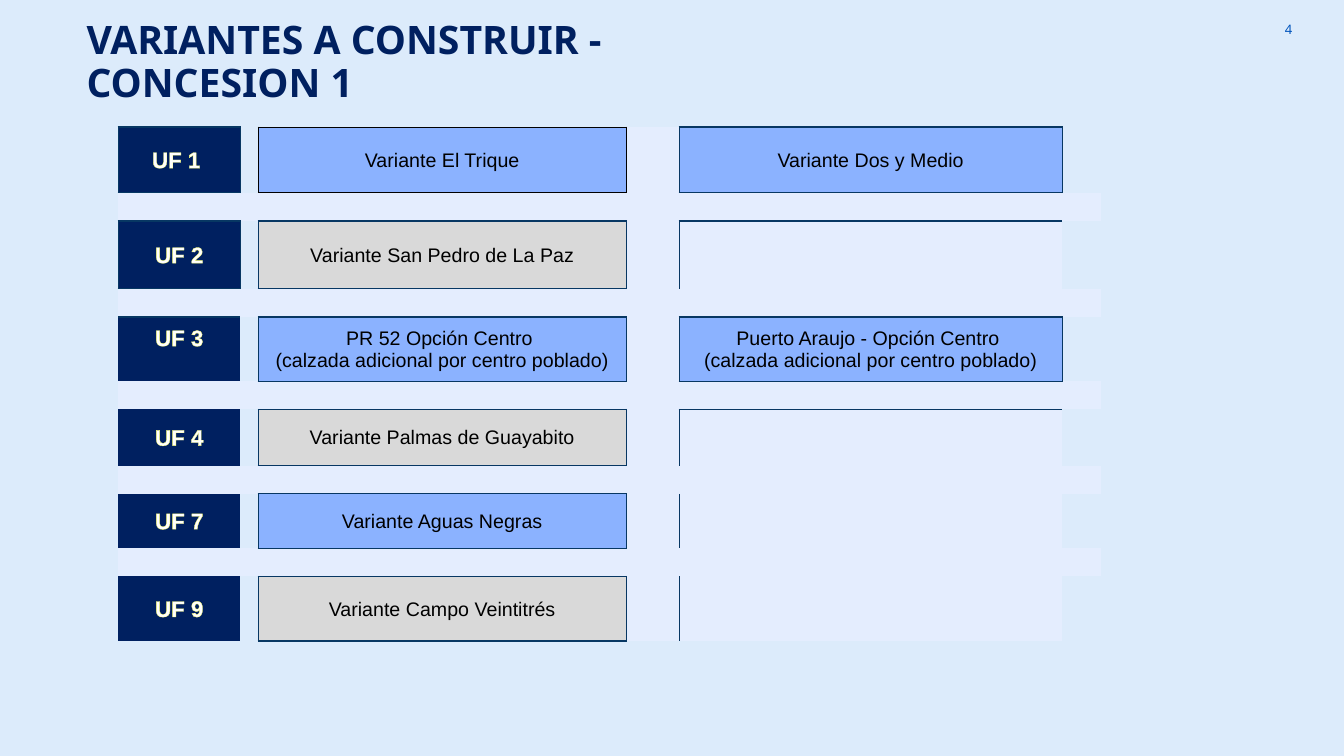
import pptx
import pptx.dml.color
import pptx.enum.text
import pptx.util
from dataclasses import dataclass
from lxml import etree

TITLE = "VARIANTES A CONSTRUIR - CONCESION 1"
PAGE_NUMBER = "4"
# unit, row height, fill name, variants
UNITS = [
    ("UF 1 ", 47, "blue", ["Variante El Trique", "Variante Dos y Medio"]),
    ("UF 2", 48.4, "grey", ["Variante San Pedro de La Paz"]),
    ("UF 3", 45.8, "blue", [
        "PR 52 Opción Centro \n(calzada adicional por centro poblado)",
        "Puerto Araujo - Opción Centro \n(calzada adicional por centro poblado)"]),
    ("UF 4", 40.1, "grey", ["Variante Palmas de Guayabito"]),
    ("UF 7", 38.9, "blue", ["Variante Aguas Negras"]),
    ("UF 9", 46.1, "grey", ["Variante Campo Veintitrés"]),
]
COLUMN_WIDTHS = [87.1, 12.9, 262.8, 37.9, 273.6, 27.9]
GAP_HEIGHT = 20.2
UNIT_COLUMN, VARIANT_COLUMNS = 0, (2, 4)
OPEN_COLUMNS = (1, 5)
BORDERED_UNITS = ("UF 1 ", "UF 2")
RAISED_UNIT, RAISED_BY = "UF 3", 16
TABLE_LEFT, TABLE_TOP = 84.5, 90.7


@dataclass(frozen=True)
class Theme:
    background: str = "DCEBFB"
    navy: str = "002060"
    number: str = "0054BC"
    blue: str = "8BB2FF"
    grey: str = "D9D9D9"
    pale: str = "E4EDFE"
    border: str = "073763"
    black: str = "000000"
    white: str = "FFFFFF"
    glow: str = "F6F973"
    heading_font: str = "Noto Sans"
    body_font: str = "Arial"
    title_size: float = 28
    unit_size: float = 16
    variant_size: float = 14
    number_size: float = 9.3


THEME = Theme()
Pt = pptx.util.Pt
ALIGN = pptx.enum.text.PP_ALIGN
MIDDLE = pptx.enum.text.MSO_ANCHOR.MIDDLE
NO_GRID_STYLE = "{2D5ABB26-0587-4C30-8999-92F81FD0307C}"
# side: row step, column step, facing side; in the order the file needs
SIDES = {"L": (0, -1, "R"), "R": (0, 1, "L"), "T": (-1, 0, "B"), "B": (1, 0, "T")}


def drawing_tag(name):
    return "{http://schemas.openxmlformats.org/drawingml/2006/main}" + name


def rgb(color):
    return pptx.dml.color.RGBColor.from_string(color)


def set_all(target, values):
    for name, value in values.items():
        setattr(target, name, value)


def add_line(parent, name, color, width):
    line = etree.SubElement(parent, drawing_tag(name), w=str(Pt(width)))
    solid = etree.SubElement(line, drawing_tag("solidFill"))
    etree.SubElement(solid, drawing_tag("srgbClr"), val=color)
    return line


def write(frame, text, color, align, **font):
    frame.text = text
    for para in frame.paragraphs:
        para.alignment = align
        for span in para.runs:
            set_all(span.font, font)
            span.font.color.rgb = rgb(color)


def add_text(page, place, text, color, align, margin, **font):
    box = page.shapes.add_textbox(*map(Pt, place))
    box.text_frame.word_wrap = True
    sides = ("left", "right", "top", "bottom")
    set_all(box.text_frame, {"margin_" + side: Pt(m) for side, m in zip(sides, margin)})
    write(box.text_frame, text, color, align, name=THEME.heading_font, **font)
    return box.text_frame


def border_edges():
    """Map (row, column) to its sides; each edge also belongs to the neighbour."""
    edges = {}
    for index, (unit, _, _, variants) in enumerate(UNITS):
        boxed = list(VARIANT_COLUMNS[:len(variants)])
        if unit in BORDERED_UNITS:
            boxed.insert(0, UNIT_COLUMN)
        for column in boxed:
            first = (index, column) == (0, VARIANT_COLUMNS[0])
            stroke = (THEME.black, 0.5) if first else (THEME.border, 1)
            for side, (down, across, facing) in SIDES.items():
                edges.setdefault((2 * index, column), {})[side] = stroke
                neighbour = (2 * index + down, column + across)
                edges.setdefault(neighbour, {})[facing] = stroke
    return edges


def format_cell(cell, fill, edges):
    set_all(cell, {"margin_left": Pt(0.7), "margin_right": Pt(0.7), "margin_top": Pt(0.7),
                   "margin_bottom": 0, "vertical_anchor": MIDDLE})
    properties = cell._tc.get_or_add_tcPr()
    for side in SIDES:
        if side in edges:
            add_line(properties, "ln" + side, *edges[side])
    if fill:
        cell.fill.solid()
        cell.fill.fore_color.rgb = rgb(fill)
    else:
        cell.fill.background()


def write_unit(cell, unit):
    write(cell.text_frame, unit, THEME.white, ALIGN.CENTER,
          name=THEME.body_font, size=Pt(THEME.unit_size), bold=True)
    properties = cell.text_frame.paragraphs[0].runs[0].font._element
    properties.insert(0, add_line(properties, "ln", THEME.glow, 0.75))
    if unit == RAISED_UNIT:
        cell.margin_bottom = Pt(RAISED_BY)


def add_variants_table(page):
    heights = [GAP_HEIGHT] * (2 * len(UNITS) - 1)
    heights[::2] = [height for _, height, _, _ in UNITS]
    frame = page.shapes.add_table(
        len(heights), len(COLUMN_WIDTHS), Pt(TABLE_LEFT), Pt(TABLE_TOP),
        Pt(sum(COLUMN_WIDTHS)), Pt(sum(heights)))
    table = frame.table
    set_all(table, {"first_row": False, "horz_banding": False})
    next(table._tbl.iter(drawing_tag("tableStyleId"))).text = NO_GRID_STYLE
    for column, width in zip(table.columns, COLUMN_WIDTHS):
        column.width = Pt(width)
    for row, height in zip(table.rows, heights):
        row.height = Pt(height)

    edges = border_edges()
    for row in range(len(heights)):
        is_gap = row % 2 == 1
        unit, _, shade, variants = UNITS[row // 2]
        texts = {} if is_gap else dict(zip(VARIANT_COLUMNS, variants))
        for column in range(len(COLUMN_WIDTHS)):
            cell = table.cell(row, column)
            is_unit = column == UNIT_COLUMN and not is_gap
            if is_unit:
                fill = THEME.navy
            elif column in texts:
                fill = getattr(THEME, shade)
            else:
                fill = None if column in OPEN_COLUMNS and not is_gap else THEME.pale
            format_cell(cell, fill, edges.get((row, column), {}))
            if is_unit:
                write_unit(cell, unit)
            elif column in texts:
                write(cell.text_frame, texts[column], THEME.black, ALIGN.CENTER,
                      name=THEME.body_font, size=Pt(THEME.variant_size), bold=False)
            else:
                para = cell.text_frame.paragraphs[0]
                etree.SubElement(para._p, drawing_tag("endParaRPr"), sz="800")


def main():
    deck = pptx.Presentation()
    set_all(deck, {"slide_width": Pt(960), "slide_height": Pt(540)})
    page = deck.slides.add_slide(deck.slide_layouts[6])
    page.background.fill.solid()
    page.background.fill.fore_color.rgb = rgb(THEME.background)
    number = add_text(page, (874.8, 0.7, 57.6, 41), PAGE_NUMBER, THEME.number, ALIGN.RIGHT,
                      [9.4] * 4, size=Pt(THEME.number_size))
    number.vertical_anchor = MIDDLE
    title = add_text(page, (54.7, 11.5, 543.6, 41), TITLE, THEME.navy, ALIGN.LEFT,
                     (7.2, 7.2, 3.6, 3.6), size=Pt(THEME.title_size), bold=True)
    title.auto_size = pptx.enum.text.MSO_AUTO_SIZE.SHAPE_TO_FIT_TEXT
    title.paragraphs[0].line_spacing = 0.9
    add_variants_table(page)
    deck.save("out.pptx")


if __name__ == "__main__":
    main()
